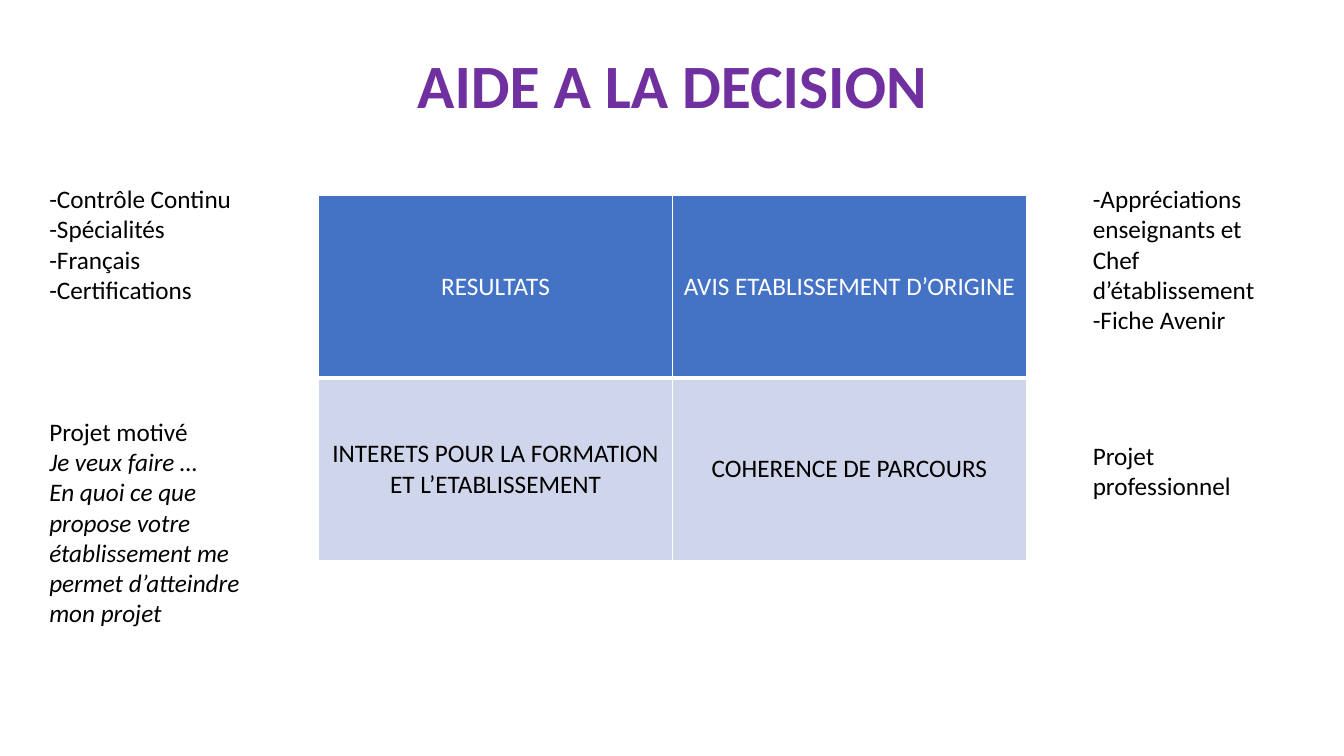
from lxml import etree
from pptx import Presentation
from pptx.dml.color import RGBColor
from pptx.enum.text import MSO_ANCHOR, PP_ALIGN
from pptx.oxml.ns import qn
from pptx.util import Pt

PX = 9144  # 100 px to the inch
LEFT, CENTER = PP_ALIGN.LEFT, PP_ALIGN.CENTER
TOP, MIDDLE = MSO_ANCHOR.TOP, MSO_ANCHOR.MIDDLE
THEME = {
    "font": "Calibri", "title": 44, "body": 18,
    "purple": "7030A0", "blue": "4472C4", "pale": "CFD5EA",
    "white": "FFFFFF", "black": "000000",
}


def write(frame, lines, size="body", color="black", bold=False,
          align=LEFT, anchor=TOP, space=1.0, slant=None):
    """Fill a text frame, one paragraph a line; lines from index slant on are italic."""
    frame.word_wrap = True
    frame.vertical_anchor = anchor
    for i, line in enumerate(lines):
        para = frame.paragraphs[0] if i == 0 else frame.add_paragraph()
        para.alignment = align
        para.line_spacing = space
        run = para.add_run()
        run.text = line
        font = run.font
        font.name = THEME["font"]
        font.size = Pt(THEME[size])
        font.bold = bold
        font.italic = slant is not None and i >= slant
        font.color.rgb = RGBColor.from_string(THEME[color])


def edge(cell, widths):
    """Draw white cell borders; widths maps a side (L, R, T, B) to points."""
    props = cell._tc.get_or_add_tcPr()
    for i, (side, width) in enumerate(widths.items()):
        line = etree.Element(qn(f"a:ln{side}"), w=str(Pt(width)))
        fill = etree.SubElement(line, qn("a:solidFill"))
        etree.SubElement(fill, qn("a:srgbClr"), val=THEME["white"])
        props.insert(i, line)


deck = Presentation()
deck.slide_width, deck.slide_height = 1333 * PX, 750 * PX
slide = deck.slides.add_slide(deck.slide_layouts[6])

# Title and side notes
texts = [
    ((92, 40, 1150, 95), ["AIDE A LA DECISION"],
     dict(size="title", color="purple", bold=True, align=CENTER,
          anchor=MIDDLE, space=0.9)),
    ((39, 177, 242, 131),
     ["-Contrôle Continu", "-Spécialités", "-Français", "-Certifications"], {}),
    ((39, 408, 242, 222),
     ["Projet motivé", "Je veux faire …",
      "En quoi ce que propose votre établissement me permet d’atteindre mon projet"],
     dict(slant=1)),
    ((1074, 177, 203, 162),
     ["-Appréciations enseignants et Chef d’établissement", "-Fiche Avenir"], {}),
    ((1074, 432, 203, 71), ["Projet professionnel"], {}),
]
for area, lines, style in texts:
    box = slide.shapes.add_textbox(*(n * PX for n in area))
    write(box.text_frame, lines, **style)

# Criteria table
rows = [
    ("blue", "white", dict(L=1, R=1, T=1, B=3),
     ["RESULTATS", "AVIS ETABLISSEMENT D’ORIGINE"]),
    ("pale", "black", dict(L=1, R=1, T=3, B=1),
     ["INTERETS POUR LA FORMATION ET L’ETABLISSEMENT", "COHERENCE DE PARCOURS"]),
]
area = (316, 194, 702, 362)
table = slide.shapes.add_table(2, 2, *(n * PX for n in area)).table
for r, (fill, color, widths, labels) in enumerate(rows):
    for c, label in enumerate(labels):
        cell = table.cell(r, c)
        cell.fill.solid()
        cell.fill.fore_color.rgb = RGBColor.from_string(THEME[fill])
        cell.vertical_anchor = MIDDLE
        write(cell.text_frame, [label], color=color, align=CENTER, anchor=None)
        edge(cell, widths)

deck.save("out.pptx")
